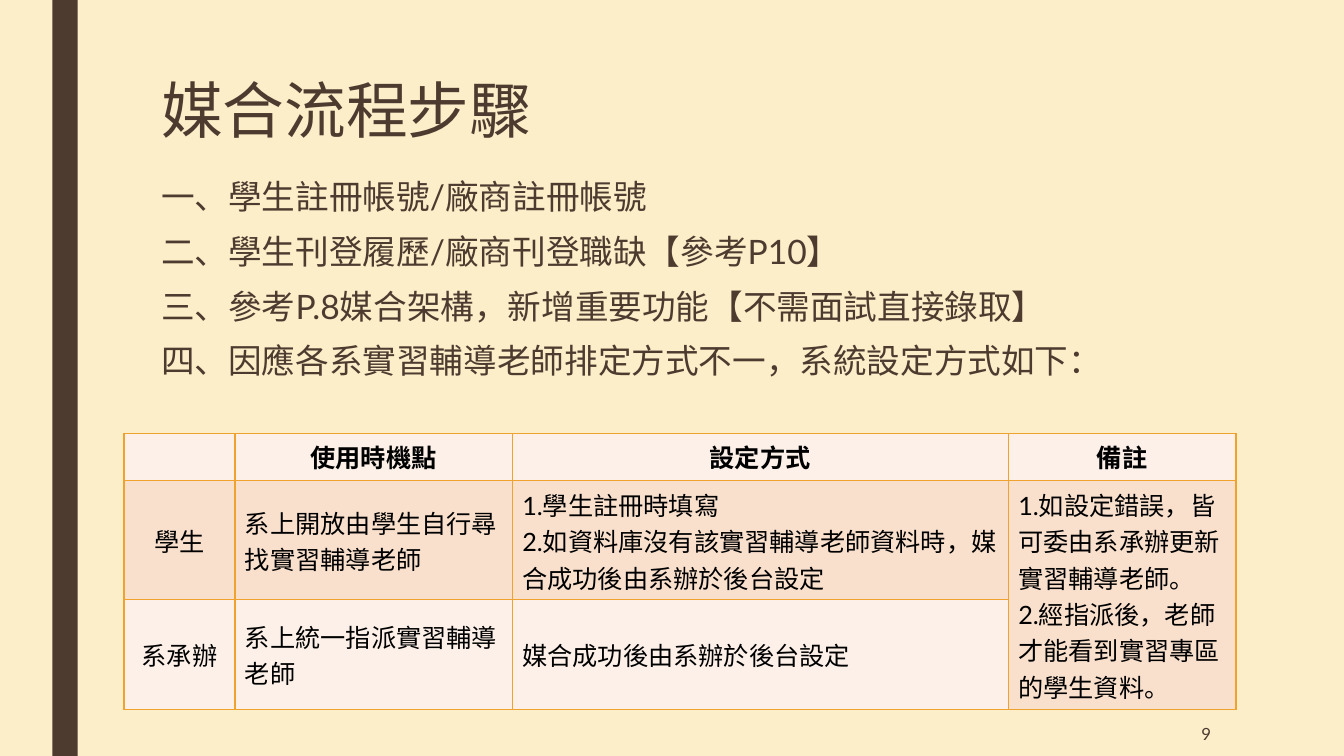
from lxml import etree
from pptx import Presentation
from pptx.dml.color import RGBColor
from pptx.enum.shapes import MSO_SHAPE
from pptx.enum.text import MSO_ANCHOR, MSO_AUTO_SIZE, PP_ALIGN
from pptx.oxml.ns import qn
from pptx.util import Inches, Pt

RECTANGLE = MSO_SHAPE.RECTANGLE
TOP, MIDDLE = MSO_ANCHOR.TOP, MSO_ANCHOR.MIDDLE
LEFT, CENTER, RIGHT = PP_ALIGN.LEFT, PP_ALIGN.CENTER, PP_ALIGN.RIGHT
NO_AUTOFIT = MSO_AUTO_SIZE.NONE

FONT = "Lato"
CREAM, BROWN, BLACK, ORANGE = "FBEEC9", "4E3B30", "000000", "F0A22E"
BANDS = ["FCF0E8", "F9E0CD"]
TITLE_ONLY = 5

STEPS = [
    "一、學生註冊帳號/廠商註冊帳號",
    "二、學生刊登履歷/廠商刊登職缺【參考P10】",
    "三、參考P.8媒合架構，新增重要功能【不需面試直接錄取】",
    "四、因應各系實習輔導老師排定方式不一，系統設定方式如下：",
]
SETTINGS = [
    [[], ["使用時機點"], ["設定方式"], ["備註"]],
    [
        ["學生"],
        ["系上開放由學生自行尋找實習輔導老師"],
        ["1.學生註冊時填寫", "2.如資料庫沒有該實習輔導老師資料時，媒合成功後由系辦於後台設定"],
        ["1.如設定錯誤，皆可委由系承辦更新實習輔導老師。", "2.經指派後，老師才能看到實習專區的學生資料。"],
    ],
    [["系承辦"], ["系上統一指派實習輔導老師"], ["媒合成功後由系辦於後台設定"], []],
]
COLUMN_WIDTHS = [1.1, 2.75, 4.92, 2.26]
ROW_HEIGHTS = [0.47, 1.18, 1.09]


def color(hex_string):
    """Return the colour for a hex string."""
    return RGBColor.from_string(hex_string)


def paint(fill, hex_string):
    """Make a fill solid in one colour."""
    fill.solid()
    fill.fore_color.rgb = color(hex_string)


def write(frame, lines, size, ink, align=LEFT, bold=False, line_spacing=None, before=0, after=0):
    """Write each line as a paragraph with a single run."""
    for index, line in enumerate(lines):
        paragraph = frame.paragraphs[0] if index == 0 else frame.add_paragraph()
        paragraph.alignment = align
        paragraph.space_before, paragraph.space_after = Pt(before), Pt(after)
        if line_spacing:
            paragraph.line_spacing = line_spacing
        run = paragraph.add_run()
        run.text = line
        run.font.name, run.font.size, run.font.bold = FONT, Pt(size), bold
        run.font.color.rgb = color(ink)


def place(shape, left, top, width, height):
    """Move and size a shape in inches."""
    shape.left, shape.top = Inches(left), Inches(top)
    shape.width, shape.height = Inches(width), Inches(height)


def add_sidebar(slide):
    """Draw the vertical bar at the left edge."""
    bar = slide.shapes.add_shape(RECTANGLE, Inches(0.52), 0, Inches(0.25), Inches(7.5))
    bar.shadow.inherit = False
    paint(bar.fill, BROWN)
    bar.line.fill.background()


def add_title(slide, heading):
    """Fill the title placeholder."""
    title = slide.shapes.title
    place(title, 1.5, 0.75, 10.5, 1.62)
    frame = title.text_frame
    frame.word_wrap, frame.auto_size, frame.vertical_anchor = True, NO_AUTOFIT, TOP
    write(frame, [heading], 44, BROWN, line_spacing=0.89)


def add_text(slide, box, lines, size, anchor=TOP, **style):
    """Add a wrapping text box at the given box."""
    frame = slide.shapes.add_textbox(*map(Inches, box)).text_frame
    frame.word_wrap, frame.vertical_anchor = True, anchor
    write(frame, lines, size, BROWN, **style)


def add_borders(cell):
    """Give a table cell thin orange borders on all sides."""
    properties = cell._tc.get_or_add_tcPr()
    for side in ("a:lnL", "a:lnR", "a:lnT", "a:lnB"):
        line = etree.SubElement(properties, qn(side), w=str(Pt(1)))
        solid = etree.SubElement(line, qn("a:solidFill"))
        etree.SubElement(solid, qn("a:srgbClr"), val=ORANGE)


def add_settings_table(slide):
    """Add the settings table with its merged remarks cell."""
    table = slide.shapes.add_table(
        len(ROW_HEIGHTS), len(COLUMN_WIDTHS), Inches(1.23), Inches(4.3),
        Inches(sum(COLUMN_WIDTHS)), Inches(sum(ROW_HEIGHTS)),
    ).table
    for column, width in zip(table.columns, COLUMN_WIDTHS):
        column.width = Inches(width)
    for row, height in zip(table.rows, ROW_HEIGHTS):
        row.height = Inches(height)
    for r, row_texts in enumerate(SETTINGS):
        for c, lines in enumerate(row_texts):
            cell = table.cell(r, c)
            header = r == 0
            add_borders(cell)
            paint(cell.fill, BANDS[r % 2])
            cell.vertical_anchor = TOP if header else MIDDLE
            align = CENTER if header or c == 0 else LEFT
            write(cell.text_frame, lines, 18, BLACK, align, bold=header)
    table.cell(1, 3).merge(table.cell(2, 3))


def main():
    """Build and save the slide."""
    deck = Presentation()
    deck.slide_width, deck.slide_height = Inches(13.33), Inches(7.5)
    slide = deck.slides.add_slide(deck.slide_layouts[TITLE_ONLY])
    paint(slide.background.fill, CREAM)
    add_sidebar(slide)
    add_title(slide, "媒合流程步驟")
    add_text(slide, (1.5, 1.73, 11.27, 5.13), STEPS, 24, line_spacing=0.94, before=10, after=2)
    add_text(slide, (10.36, 7.06, 1.75, 0.44), ["9"], 12, MIDDLE, align=RIGHT)
    add_settings_table(slide)
    deck.save("out.pptx")


if __name__ == "__main__":
    main()
